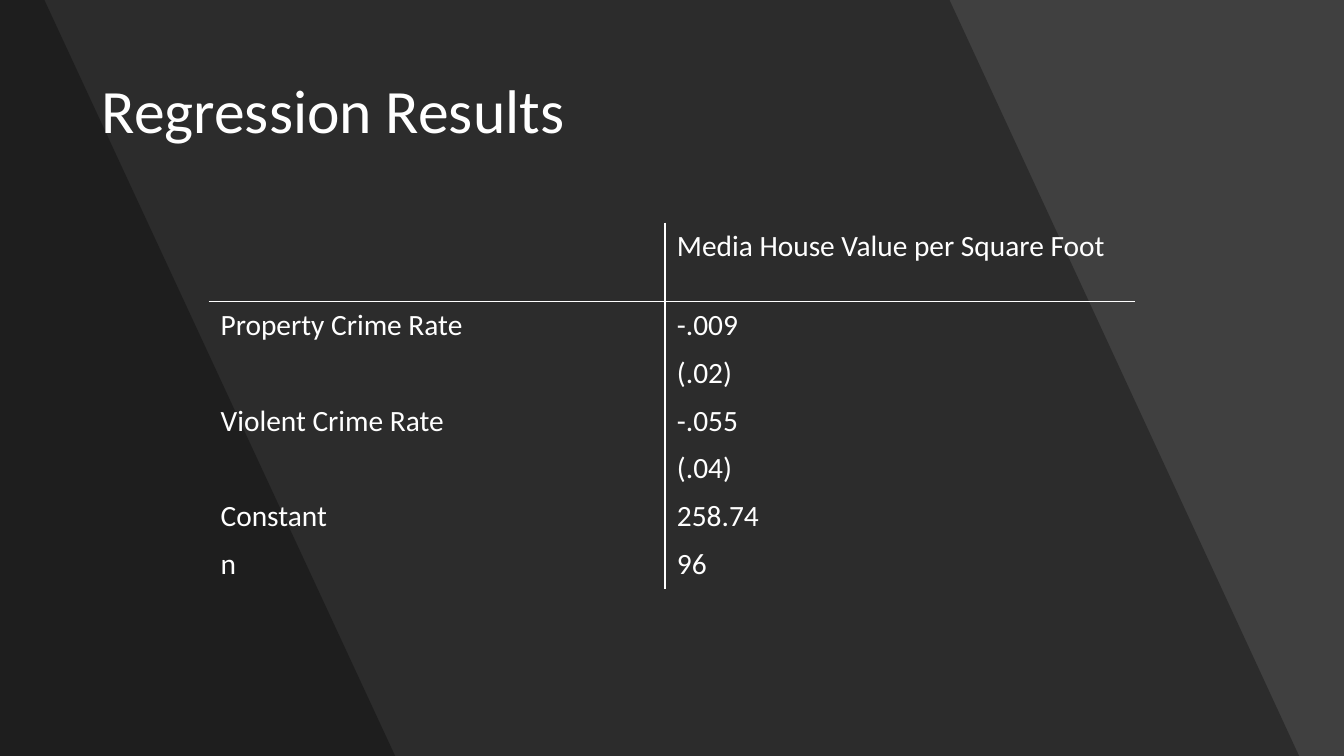
from lxml.etree import SubElement
from pptx import Presentation
from pptx.dml.color import RGBColor
from pptx.enum.text import MSO_ANCHOR, PP_ALIGN
from pptx.oxml.ns import qn
from pptx.util import Cm, Pt

TITLE = "Regression Results"
RESULTS = [
    ("", "Media House Value per Square Foot"),
    ("Property Crime Rate", "-.009"),
    ("", "(.02)"),
    ("Violent Crime Rate", "-.055"),
    ("", "(.04)"),
    ("Constant", "258.74"),
    ("n", "96"),
]

WHITE = RGBColor(0xFF, 0xFF, 0xFF)
BLACK = RGBColor(0x00, 0x00, 0x00)
CHARCOAL = RGBColor(0x40, 0x40, 0x40)

SLIDE_WIDTH, SLIDE_HEIGHT = Cm(33.87), Cm(19.05)
PANEL_EDGES = [(Cm(23.93), Cm(32.74)), (Cm(1.12), Cm(9.96))]
PANEL_OPACITY = 30
TITLE_BOX = {"left": Cm(2.31), "top": Cm(1.02), "width": Cm(29.24), "height": Cm(3.68)}
TABLE_LEFT, TABLE_TOP = Cm(5.26), Cm(5.61)
COLUMN_WIDTHS = [Cm(11.5), Cm(11.84)]
HEADER_HEIGHT, ROW_HEIGHT = Cm(1.98), Cm(1.2)
TITLE_FONT = {"name": "Calibri", "size": Pt(44), "bold": False}
CELL_FONT = {"name": "Calibri", "size": Pt(21), "bold": False}
CELL_MARGINS = {
    "margin_left": Cm(0.3),
    "margin_right": Cm(0.3),
    "margin_top": Cm(0.15),
    "margin_bottom": Cm(0.15),
}
TABLE_FLAGS = {"first_row": False, "horz_banding": False}


def apply_format(target, values):
    for name, value in values.items():
        setattr(target, name, value)


def format_font(font, values):
    apply_format(font, values)
    font.color.rgb = WHITE


def add_panel(slide, top_edge, bottom_edge):
    builder = slide.shapes.build_freeform(0, 0)
    builder.add_line_segments(
        [(top_edge, 0), (bottom_edge, SLIDE_HEIGHT), (0, SLIDE_HEIGHT)], close=True
    )
    panel = builder.convert_to_shape()
    panel.shadow.inherit = False
    panel.line.fill.background()
    panel.fill.solid()
    panel.fill.fore_color.rgb = BLACK
    color = panel._element.spPr.find(qn("a:solidFill"))[0]
    SubElement(color, qn("a:alpha"), val=str(PANEL_OPACITY * 1000))


def add_title(slide):
    title = slide.shapes.title
    slide.shapes._spTree.append(title._element)
    apply_format(title, TITLE_BOX)
    title.text_frame.text = TITLE
    title.text_frame.vertical_anchor = MSO_ANCHOR.MIDDLE
    paragraph = title.text_frame.paragraphs[0]
    apply_format(paragraph, {"alignment": PP_ALIGN.LEFT, "line_spacing": 0.9})
    format_font(paragraph.runs[0].font, TITLE_FONT)


def set_borders(cell, ruled_sides):
    properties = cell._tc.get_or_add_tcPr()
    for side in "LRTB":
        line = SubElement(properties, qn(f"a:ln{side}"), w=str(Pt(1)))
        if side in ruled_sides:
            fill = SubElement(line, qn("a:solidFill"))
            SubElement(fill, qn("a:srgbClr"), val=str(WHITE))
        else:
            SubElement(line, qn("a:noFill"))


def add_results_table(slide):
    row_heights = [HEADER_HEIGHT] + [ROW_HEIGHT] * (len(RESULTS) - 1)
    table = slide.shapes.add_table(
        len(RESULTS), len(COLUMN_WIDTHS), TABLE_LEFT, TABLE_TOP,
        sum(COLUMN_WIDTHS), sum(row_heights),
    ).table
    apply_format(table, TABLE_FLAGS)
    for column, width in zip(table.columns, COLUMN_WIDTHS):
        column.width = width
    for row_index, (row, height) in enumerate(zip(table.rows, row_heights)):
        row.height = height
        horizontal_rule = {0: "B", 1: "T"}.get(row_index, "")
        for cell, text, vertical_rule in zip(row.cells, RESULTS[row_index], "RL"):
            set_borders(cell, vertical_rule + horizontal_rule)
            cell.fill.background()
            apply_format(cell, CELL_MARGINS)
            cell.text = text
            format_font(cell.text_frame.paragraphs[0].font, CELL_FONT)
            for run in cell.text_frame.paragraphs[0].runs:
                format_font(run.font, CELL_FONT)


def main():
    presentation = Presentation()
    apply_format(presentation, {"slide_width": SLIDE_WIDTH, "slide_height": SLIDE_HEIGHT})
    slide = presentation.slides.add_slide(presentation.slide_layouts[5])
    slide.background.fill.solid()
    slide.background.fill.fore_color.rgb = CHARCOAL
    for top_edge, bottom_edge in PANEL_EDGES:
        add_panel(slide, top_edge, bottom_edge)
    add_title(slide)
    add_results_table(slide)
    presentation.save("out.pptx")


if __name__ == "__main__":
    main()
